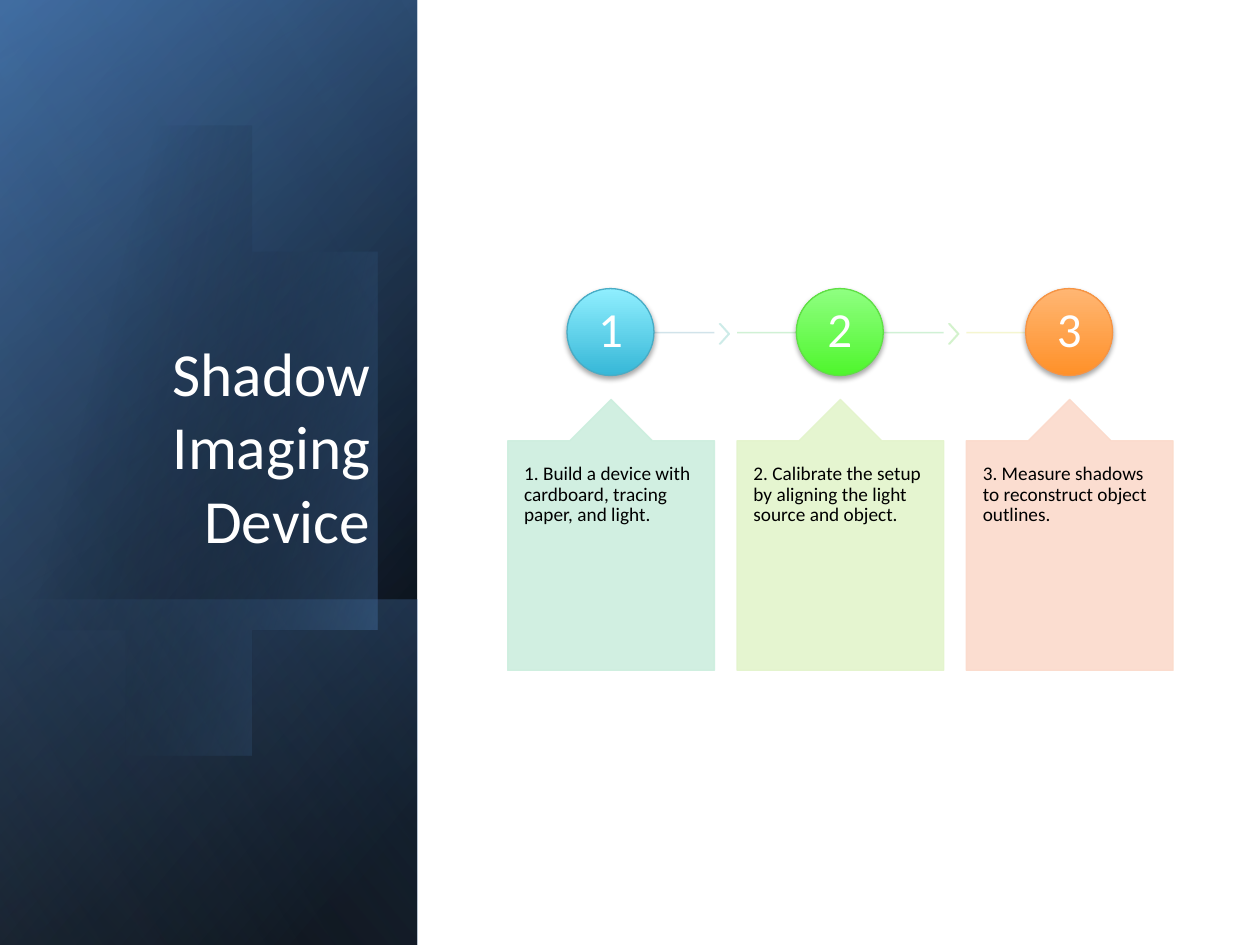
import pptx
import pptx.util
import pptx.dml.color
import pptx.enum.shapes
import pptx.enum.text
import pptx.oxml
import pptx.oxml.ns

Inches, Pt = pptx.util.Inches, pptx.util.Pt
RGB = pptx.dml.color.RGBColor
SHAPE = pptx.enum.shapes.MSO_SHAPE
ALIGN = pptx.enum.text.PP_ALIGN
ANCHOR = pptx.enum.text.MSO_ANCHOR
qn = pptx.oxml.ns.qn
NS = pptx.oxml.ns.nsdecls("a")

BLACK, WHITE = RGB(0, 0, 0), RGB(255, 255, 255)
NAVY, BLUE, PALE_BLUE = RGB(0x36, 0x60, 0x92), RGB(0x4F, 0x81, 0xBD), RGB(0x93, 0xB3, 0xD7)
TEAL_LIGHT, TEAL, TEAL_EDGE = RGB(0x90, 0xEF, 0xFF), RGB(0x36, 0xB7, 0xD7), RGB(0x49, 0xAC, 0xC5)
LIME_LIGHT, LIME, LIME_EDGE = RGB(0x8F, 0xFF, 0x81), RGB(0x4F, 0xF6, 0x2D), RGB(0x5F, 0xDF, 0x45)
ORANGE_LIGHT, ORANGE, ORANGE_EDGE = RGB(0xFF, 0xB6, 0x73), RGB(0xFF, 0x91, 0x29), RGB(0xF6, 0x94, 0x44)
MINT, PISTACHIO, PEACH = RGB(0xCC, 0xEE, 0xDE), RGB(0xE3, 0xF4, 0xCB), RGB(0xFB, 0xDA, 0xCB)
LINE_BLUE, LINE_GREEN, LINE_YELLOW = RGB(0xCD, 0xE1, 0xE8), RGB(0xCB, 0xF0, 0xD1), RGB(0xF5, 0xF6, 0xCB)
CHEVRON_AQUA, CHEVRON_GREEN = RGB(0xCC, 0xEB, 0xE8), RGB(0xD2, 0xF2, 0xCB)


class Deck:
    font = "Calibri"
    line_width = Pt(0.75)
    opacity = 90

    def __init__(self, slide):
        self.slide = slide
        self.shapes = slide.shapes

    def gradient(self, shape, stops, angle):
        """Stops are (position, colour, opacity), all in percent."""
        shape.fill.gradient()
        gs = "".join(
            f'<a:gs pos="{pos * 1000}"><a:srgbClr val="{color}">'
            f'<a:alpha val="{alpha * 1000}"/></a:srgbClr></a:gs>'
            for pos, color, alpha in stops)
        new = pptx.oxml.parse_xml(
            f'<a:gradFill {NS} rotWithShape="1"><a:gsLst>{gs}</a:gsLst>'
            f'<a:lin ang="{angle * 60000}" scaled="0"/></a:gradFill>')
        sp_pr = shape._element.spPr
        sp_pr.replace(sp_pr.find(qn("a:gradFill")), new)

    def soften(self, shape):
        for color in shape._element.spPr.iter(qn("a:srgbClr")):
            color.append(pptx.oxml.parse_xml(
                f'<a:alpha {NS} val="{self.opacity * 1000}"/>'))

    def panel(self, top, width, height, stops, angle):
        """Left-edge panel, turned a quarter and mirrored."""
        shape = self.shapes.add_shape(
            SHAPE.RECTANGLE, Inches((width - height) / 2),
            Inches(top + (height - width) / 2), Inches(height), Inches(width))
        shape.rotation = 90
        shape._element.spPr.find(qn("a:xfrm")).set("flipH", "1")
        shape.shadow.inherit = False
        shape.line.fill.background()
        self.gradient(shape, stops, angle)

    def outline(self, points, stops, angle):
        builder = self.shapes.build_freeform(*points[0], scale=Inches(1))
        builder.add_line_segments(points[1:], close=True)
        shape = builder.convert_to_shape()
        shape.shadow.inherit = False
        shape.line.fill.background()
        self.gradient(shape, stops, angle)

    def pastel(self, kind, left, top, width, height, color, adjustments):
        shape = self.shapes.add_shape(
            kind, Inches(left), Inches(top), Inches(width), Inches(height))
        for i, value in enumerate(adjustments):
            shape.adjustments[i] = value
        shape.shadow.inherit = False
        shape.fill.solid()
        shape.fill.fore_color.rgb = color
        shape.line.color.rgb = color
        shape.line.width = self.line_width
        self.soften(shape)

    def rule(self, left, right, y, color):
        line = self.shapes.add_connector(
            pptx.enum.shapes.MSO_CONNECTOR.STRAIGHT,
            Inches(left), Inches(y), Inches(right), Inches(y))
        line.line.color.rgb = color
        line.line.width = self.line_width
        self.soften(line)
        line._element.spPr.append(pptx.oxml.parse_xml(f"<a:effectLst {NS}/>"))

    def ball(self, left, top, size, light, dark, edge):
        shape = self.shapes.add_shape(
            SHAPE.OVAL, Inches(left), Inches(top), Inches(size), Inches(size))
        self.gradient(shape, [(0, dark, 100), (100, light, 100)], 270)
        shape.line.color.rgb = edge
        shape.line.width = self.line_width
        shape.shadow.inherit = False
        shape._element.spPr.find(qn("a:effectLst")).append(pptx.oxml.parse_xml(
            f'<a:outerShdw {NS} blurRad="{Pt(3.1)}" dist="{Pt(1.8)}" dir="5400000" '
            'rotWithShape="0"><a:srgbClr val="000000"><a:alpha val="35000"/>'
            '</a:srgbClr></a:outerShdw>'))

    def fill_text(self, frame, text, size, color, align, anchor, inset_x, inset_y, spacing):
        frame.word_wrap = True
        frame.auto_size = pptx.enum.text.MSO_AUTO_SIZE.NONE
        frame.vertical_anchor = anchor
        frame.margin_left = frame.margin_right = Inches(inset_x)
        frame.margin_top = frame.margin_bottom = Inches(inset_y)
        paragraph = frame.paragraphs[0]
        paragraph.alignment = align
        paragraph.line_spacing = spacing
        run = paragraph.add_run()
        run.text = text
        run.font.name = self.font
        run.font.size = Pt(size)
        run.font.color.rgb = color

    def text(self, left, top, width, height, *style):
        box = self.shapes.add_textbox(
            Inches(left), Inches(top), Inches(width), Inches(height))
        self.fill_text(box.text_frame, *style)

    def title(self, left, top, width, height, text):
        title = self.shapes.title
        title.left, title.top = Inches(left), Inches(top)
        title.width, title.height = Inches(width), Inches(height)
        self.fill_text(title.text_frame, text, 35, WHITE, ALIGN.RIGHT,
                       ANCHOR.BOTTOM, 0.1, 0.05, 1.0)
        title._element.getparent().append(title._element)  # in front of the panels


def bezier(start, c1, c2, end, steps=16):
    """Points along a cubic curve, without its start."""
    for t in (i / steps for i in range(1, steps + 1)):
        weights = ((1 - t) ** 3, 3 * t * (1 - t) ** 2, 3 * t * t * (1 - t), t ** 3)
        yield tuple(sum(w * p[axis] for w, p in zip(weights, (start, c1, c2, end)))
                    for axis in (0, 1))


def glow_points():
    points = [(0.96, 1.14)]
    for curve in [((1.71, 1.22), (2.44, 1.92), (2.73, 2.9)),
                  ((3.07, 4.12), (2.62, 5.31), (1.71, 5.57)),
                  ((1.14, 5.74), (0.53, 5.5), (0.07, 5))]:
        points += bezier(points[-1], *curve)
    points += [(-0.03, 4.88), (-0.25, 1.66), (-0.15, 1.54)]
    for curve in [((0.02, 1.37), (0.22, 1.25), (0.45, 1.18)),
                  ((0.62, 1.13), (0.79, 1.12), (0.96, 1.14))]:
        points += bezier(points[-1], *curve)
    return points


def main():
    prs = pptx.Presentation()
    prs.slide_width, prs.slide_height = Inches(10), Inches(7.5)
    deck = Deck(prs.slides.add_slide(prs.slide_layouts[5]))

    # Blue side panel
    side = 3.31
    deck.panel(0, side, 7.5, [(0, BLACK, 100), (8, BLACK, 100), (100, NAVY, 100)], 50)
    deck.panel(0, side, 7.5, [(0, BLACK, 0), (99, BLUE, 46), (100, BLUE, 46)], 30)
    deck.panel(4.76, side, 2.74, [(0, BLUE, 29), (2, BLUE, 29), (100, BLACK, 30)], 130)
    deck.outline(glow_points(), [(0, BLACK, 0), (29, BLACK, 0), (100, BLUE, 43)], 14)
    deck.panel(0, side, 7.5,
               [(0, BLACK, 0), (99, PALE_BLUE, 11), (100, PALE_BLUE, 11)], 120)
    deck.title(0.48, 1.84, 2.56, 2.62, "Shadow Imaging Device")

    # Steps: text, ball colours, card, rule (start and end from the card), chevron
    steps = [
        ("Build a device with cardboard, tracing paper, and light.",
         (TEAL_LIGHT, TEAL, TEAL_EDGE), MINT, (0.91, 1.64, LINE_BLUE), CHEVRON_AQUA),
        ("Calibrate the setup by aligning the light source and object.",
         (LIME_LIGHT, LIME, LIME_EDGE), PISTACHIO, (0, 1.64, LINE_GREEN), CHEVRON_GREEN),
        ("Measure shadows to reconstruct object outlines.",
         (ORANGE_LIGHT, ORANGE, ORANGE_EDGE), PEACH, (0, 0.82, LINE_YELLOW), None),
    ]
    card_width, pitch = 1.64, 1.82
    for i, (text, ball, card, (start, end, rule), chevron) in enumerate(steps):
        left = 4.03 + i * pitch
        deck.rule(left + start, left + end, 2.64, rule)
        if chevron:
            deck.pastel(SHAPE.CHEVRON, left + 1.68, 2.57, 0.08, 0.16, chevron, [0.9])
        deck.ball(left + 0.47, 2.29, 0.69, *ball)
        deck.text(left + 0.57, 2.39, 0.49, 0.49, str(i + 1), 28, WHITE,
                  ALIGN.CENTER, ANCHOR.MIDDLE, 0.03, 0.03, 0.9)
        deck.pastel(SHAPE.UP_ARROW_CALLOUT, left, 3.17, card_width, 2.15, card,
                    [0.5, 0.2, 0.2, 1])
        deck.text(left, 3.5, card_width, 1.82, f"{i + 1}. {text}", 11, BLACK,
                  ALIGN.LEFT, ANCHOR.TOP, 0.13, 0.18, 0.9)

    prs.save("out.pptx")


if __name__ == "__main__":
    main()
